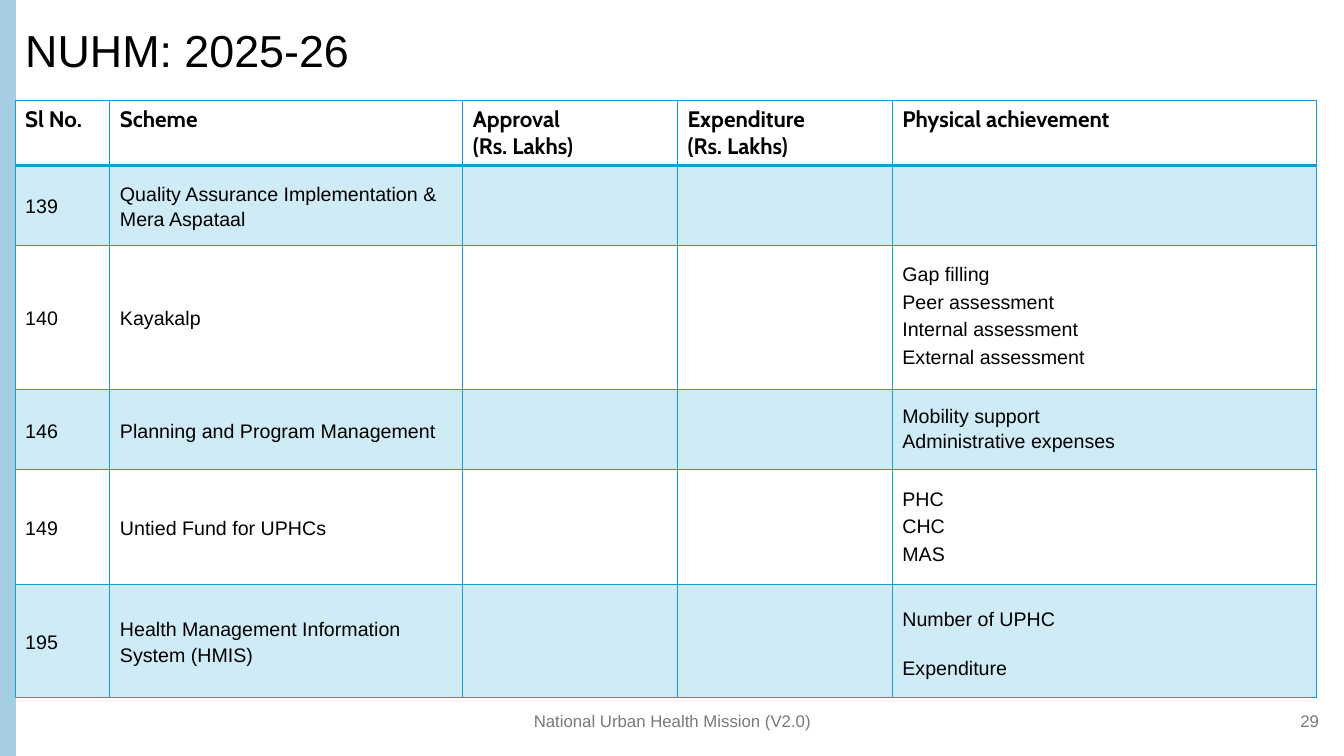
from dataclasses import dataclass

from lxml import etree
from pptx import Presentation
from pptx.dml.color import RGBColor
from pptx.enum import shapes, text
from pptx.oxml import ns
from pptx.util import Inches, Pt


@dataclass(frozen=True)
class Theme:
    ink: str = "000000"
    muted: str = "797979"
    stripe: str = "A6CEE3"
    accent: str = "0F9ED5"
    tint_alpha: int = 20000
    body_font: str = "Arial"
    header_font: str = "Cabin"
    title_size: int = 32
    header_size: int = 16
    cell_size: int = 14
    footer_size: int = 12


theme = Theme()


def write_text(frame, content, size, font=theme.body_font, color=theme.ink, bold=False,
               align=text.PP_ALIGN.LEFT, line=1.0, before=0, after=0):
    """Write each line of content as a formatted paragraph."""
    frame.word_wrap = True
    for index, words in enumerate(content.split("\n")):
        paragraph = frame.paragraphs[0] if index == 0 else frame.add_paragraph()
        paragraph.alignment = align
        paragraph.line_spacing = line
        paragraph.space_before, paragraph.space_after = Pt(before), Pt(after)
        run = paragraph.add_run()
        run.text = words
        run.font.name, run.font.size, run.font.bold = font, Pt(size), bold
        run.font.color.rgb = RGBColor.from_string(color)


def set_borders(cell, widths):
    """Draw the left, right, top and bottom borders, widths in points."""
    properties = cell._tc.get_or_add_tcPr()
    for index, (side, width) in enumerate(zip("LRTB", widths)):
        border = etree.Element(ns.qn(f"a:ln{side}"), w=str(Pt(width)))
        fill = etree.SubElement(border, ns.qn("a:solidFill"))
        etree.SubElement(fill, ns.qn("a:srgbClr"), val=theme.accent)
        properties.insert(index, border)


presentation = Presentation()
presentation.slide_width, presentation.slide_height = Inches(13.33), Inches(7.5)
slide = presentation.slides.add_slide(presentation.slide_layouts[5])

stripe = slide.shapes.add_shape(shapes.MSO_SHAPE.RECTANGLE, 0, 0, Inches(0.15), Inches(7.5))
stripe.shadow.inherit = False
stripe.fill.solid()
stripe.fill.fore_color.rgb = RGBColor.from_string(theme.stripe)
stripe.line.color.rgb = RGBColor.from_string(theme.stripe)
stripe.line.width = Pt(1.5)

title = slide.shapes.title
title.left, title.top = Inches(0.15), Inches(0.15)
title.width, title.height = Inches(13.05), Inches(0.75)
title.text_frame.vertical_anchor = text.MSO_ANCHOR.MIDDLE
write_text(title.text_frame, "NUHM: 2025-26", theme.title_size, line=0.9)

footers = [
    ("National Urban Health Mission (V2.0)", 4.42, 4.5, text.PP_ALIGN.CENTER),
    ("29", 10.18, 3, text.PP_ALIGN.RIGHT),
]
for words, left, width, align in footers:
    footer = slide.shapes.add_textbox(Inches(left), Inches(6.95), Inches(width), Inches(0.4))
    footer.text_frame.vertical_anchor = text.MSO_ANCHOR.MIDDLE
    write_text(footer.text_frame, words, theme.footer_size, color=theme.muted, align=align)

headers = ["Sl No.", "Scheme", "Approval\n(Rs. Lakhs)", "Expenditure\n(Rs. Lakhs)",
           "Physical achievement"]
# Number, scheme, achievement, row height, format of the achievement
schemes = [
    ("139", "Quality Assurance Implementation & Mera Aspataal", "", 0.77, {}),
    ("140", "Kayakalp",
     "Gap filling\nPeer assessment\nInternal assessment\nExternal assessment",
     1.36, {"line": 1.25}),
    ("146", "Planning and Program Management", "Mobility support\nAdministrative expenses",
     0.77, {"line": 1.15}),
    ("149", "Untied Fund for UPHCs", "PHC\nCHC\nMAS", 1.09, {"line": 1.25}),
    ("195", "Health Management Information System (HMIS)", "Number of UPHC\nExpenditure",
     1.09, {"line": 1.5, "after": 12}),
]
column_widths = [0.94, 3.5, 2.13, 2.13, 4.21]
row_heights = [0.64] + [scheme[3] for scheme in schemes]

table = slide.shapes.add_table(
    len(row_heights), len(column_widths), Inches(0.15), Inches(1),
    Inches(sum(column_widths)), Inches(sum(row_heights))).table
table.first_row = table.horz_banding = False
for column, width in zip(table.columns, column_widths):
    column.width = Inches(width)
for row, height in zip(table.rows, row_heights):
    row.height = Inches(height)

for column_index, heading in enumerate(headers):
    cell = table.cell(0, column_index)
    write_text(cell.text_frame, heading, theme.header_size, font=theme.header_font, bold=True)

for row_index, (number, scheme, achievement, _, style) in enumerate(schemes, start=1):
    label_style = {"line": 1.15, "before": 12}
    entries = [(0, number, label_style), (1, scheme, label_style), (4, achievement, style)]
    for column_index, words, cell_style in entries:
        if not words:
            continue
        cell = table.cell(row_index, column_index)
        cell.margin_top = cell.margin_bottom = Inches(0.13)
        if column_index < 2:
            cell.vertical_anchor = text.MSO_ANCHOR.MIDDLE
        write_text(cell.text_frame, words, theme.cell_size, **cell_style)

for row_index, row in enumerate(table.rows):
    for cell in row.cells:
        if row_index % 2:
            cell.fill.solid()
            cell.fill.fore_color.rgb = RGBColor.from_string(theme.accent)
            color = cell._tc.tcPr.find(".//" + ns.qn("a:srgbClr"))
            etree.SubElement(color, ns.qn("a:alpha"), val=str(theme.tint_alpha))
        else:
            cell.fill.background()
        set_borders(cell, (1, 1, 2 if row_index == 1 else 1, 2 if row_index == 0 else 1))

presentation.save("out.pptx")
